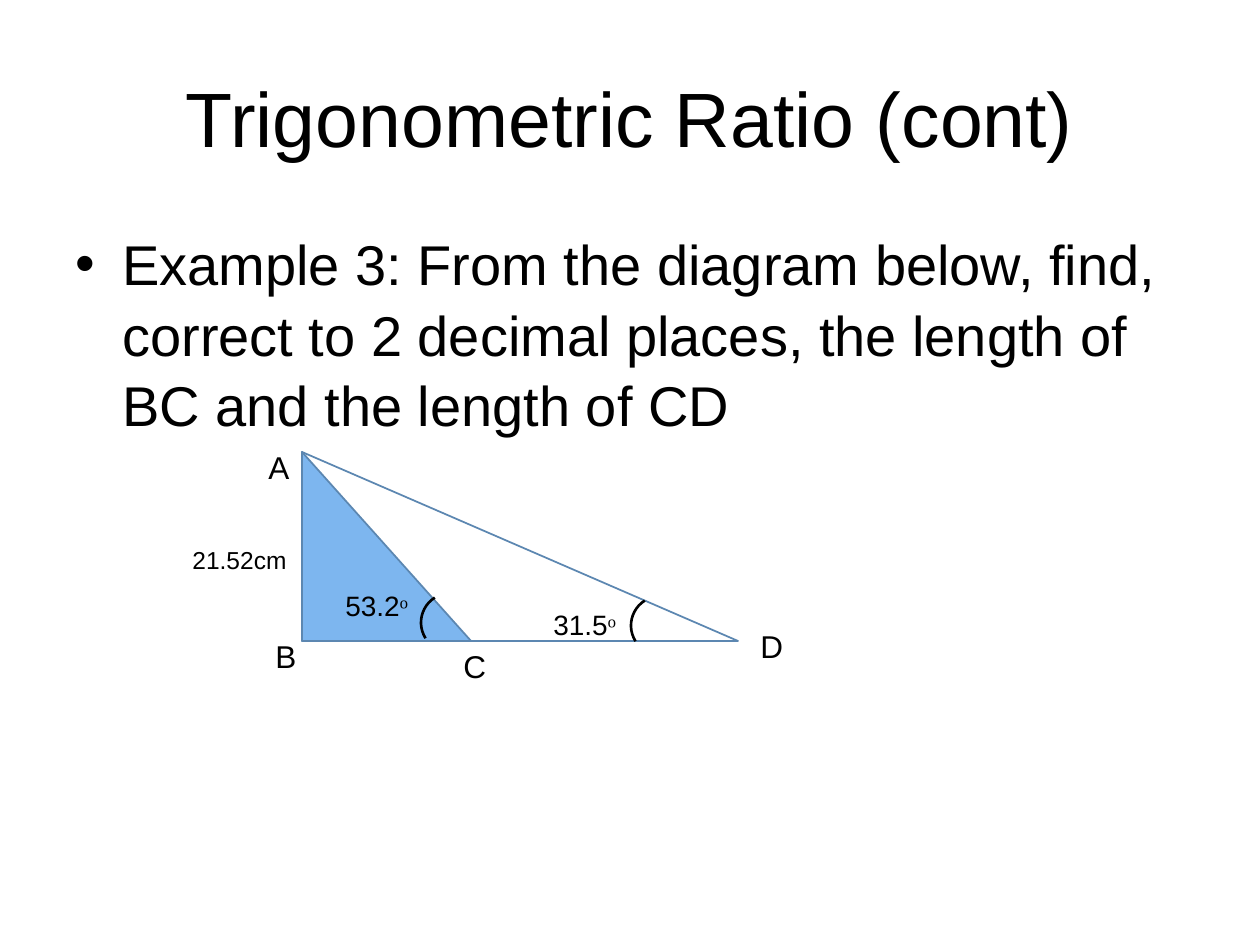
import pptx
import pptx.dml.color
import pptx.enum.shapes
import pptx.enum.text
import pptx.util
from pptx.oxml import parse_xml
from pptx.oxml.ns import nsdecls

PX = 914400 // 126
FONT, DEGREE_FONT = "Arial", "Times New Roman"
BLACK, EDGE, SHADE = "000000", "5C87B1", "7DB6EF"

TITLE = "Trigonometric Ratio (cont)"
QUESTION = ("Example 3: From the diagram below, find, correct to 2 decimal places, "
            "the length of BC and the length of CD")

# Triangles share the vertical side AB: (width, fill)
A_POINT, AB = (302, 452), 189
TRIANGLES = [(436, None), (169, SHADE)]

# (text, degree sign, left, top, width, height, size, wrap)
LABELS = [
    ("A", "", 256, 442, 48, 50, 18, False),
    ("B", "", 263, 631, 79, 50, 18, True),
    ("C", "", 451, 641, 49, 50, 18, True),
    ("D", "", 748, 621, 59, 50, 18, True),
    ("21.52cm", "", 180, 539, 132, 43, 14, False),
    ("31.5", "ᵒ", 541, 601, 118, 47, 16, True),
    ("53.2", "ᵒ", 333, 582, 118, 47, 16, True),
]

ANGLE_ARCS = [(631, 596), (421, 593)]
ARC_SIZE, ARC_TURN = 59, 237.8


def px(*lengths):
    return [length * PX for length in lengths]


def rgb(colour):
    return pptx.dml.color.RGBColor.from_string(colour)


def style(run, size, font=FONT):
    run.font.name = font
    run.font.size = pptx.util.Pt(size)
    run.font.color.rgb = rgb(BLACK)


def add_text(slide, box, text, size, wrap=True):
    frame = slide.shapes.add_textbox(*px(*box)).text_frame
    frame.word_wrap = wrap
    frame.text = text
    style(frame.paragraphs[0].runs[0], size)
    return frame


def add_outline(slide, preset, box, line, weight, fill=None):
    shape = slide.shapes.add_shape(preset, *px(*box))
    shape.shadow.inherit = False
    shape.line.color.rgb = rgb(line)
    shape.line.width = pptx.util.Pt(weight)
    if fill:
        shape.fill.solid()
        shape.fill.fore_color.rgb = rgb(fill)
    else:
        shape.fill.background()
    return shape


def add_bullet(paragraph, indent):
    properties = paragraph._p.get_or_add_pPr()
    properties.set("marL", str(indent * PX))
    properties.set("indent", str(-indent * PX))
    properties.append(parse_xml(f'<a:buFont {nsdecls("a")} typeface="{FONT}"/>'))
    properties.append(parse_xml(f'<a:buChar {nsdecls("a")} char="•"/>'))


def main():
    deck = pptx.Presentation()
    deck.slide_width, deck.slide_height = px(1260, 945)
    slide = deck.slides.add_slide(deck.slide_layouts[6])

    question = add_text(slide, (63, 220, 1134, 624), QUESTION, 32).paragraphs[0]
    add_bullet(question, 47)
    question.line_spacing = 1.05

    title = add_text(slide, (63, 38, 1134, 157), TITLE, 44)
    title.vertical_anchor = pptx.enum.text.MSO_ANCHOR.MIDDLE
    title.paragraphs[0].alignment = pptx.enum.text.PP_ALIGN.CENTER

    presets = pptx.enum.shapes.MSO_SHAPE
    for base, fill in TRIANGLES:
        add_outline(slide, presets.RIGHT_TRIANGLE, (*A_POINT, base, AB), EDGE, 1, fill)

    for left, top in ANGLE_ARCS:
        arc = add_outline(slide, presets.ARC, (left, top, ARC_SIZE, ARC_SIZE), BLACK, 1.5)
        arc.rotation = ARC_TURN

    for text, degree, *box, size, wrap in LABELS:
        label = add_text(slide, box, text, size, wrap)
        label.auto_size = pptx.enum.text.MSO_AUTO_SIZE.SHAPE_TO_FIT_TEXT
        if degree:
            sign = label.paragraphs[0].add_run()
            sign.text = degree
            style(sign, size, DEGREE_FONT)

    deck.save("out.pptx")


if __name__ == "__main__":
    main()
